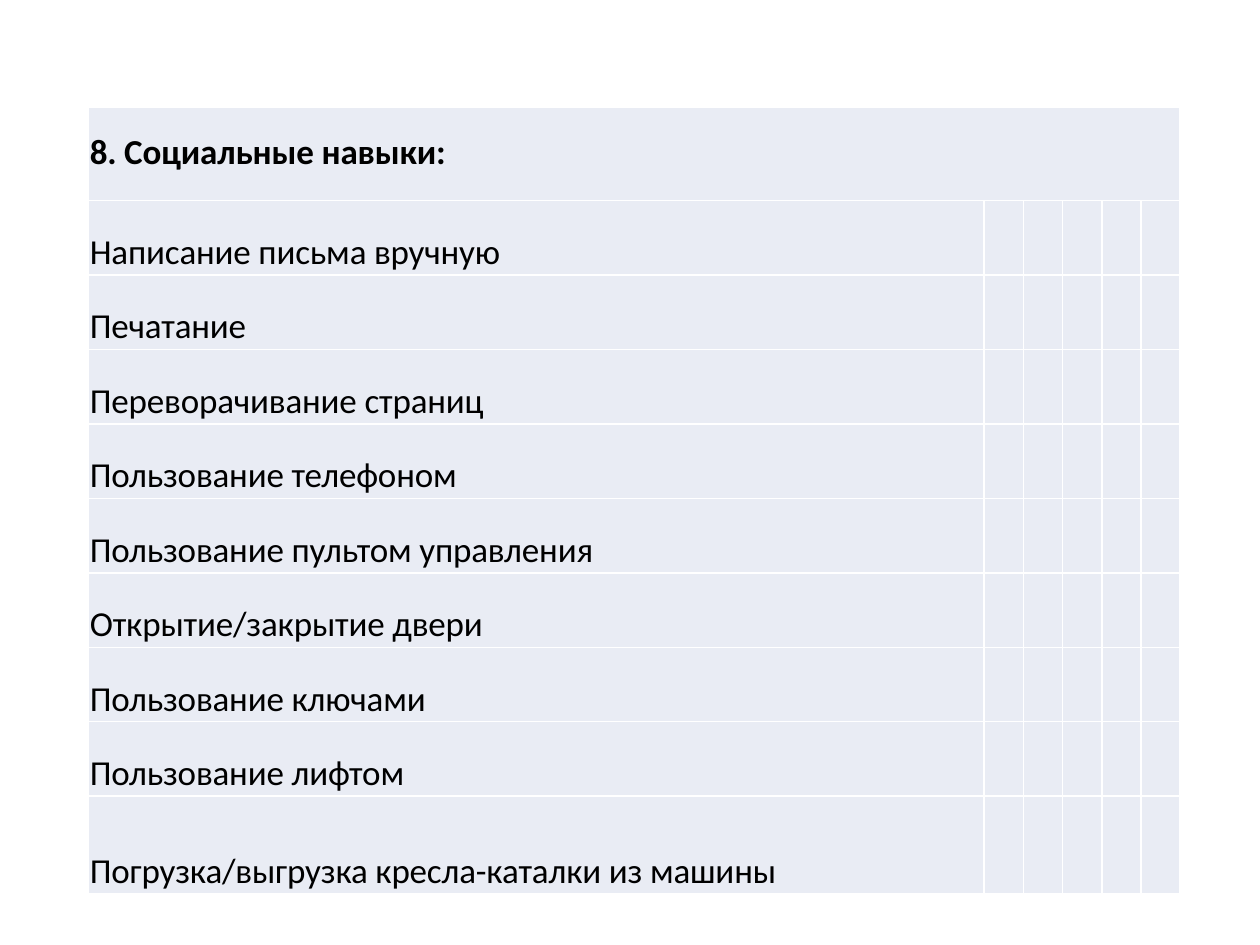
from lxml import etree
from pptx import Presentation
from pptx.dml.color import RGBColor
from pptx.enum import text as text_enum
from pptx.oxml import ns
from pptx.util import Pt

HEADING = "8. Социальные навыки:"
SKILLS = [
    "Написание письма вручную",
    "Печатание",
    "Переворачивание страниц",
    "Пользование телефоном",
    "Пользование пультом управления",
    "Открытие/закрытие двери",
    "Пользование ключами",
    "Пользование лифтом",
    "Погрузка/выгрузка кресла-каталки из машины",
]
SCORE_COLUMNS = 5
SCORE_WIDTH = 22.4
HEADING_HEIGHT = 53.2
LAST_HEIGHT = 55.6


def color(value):
    return RGBColor.from_string(value)


def write_text(cell, content, top, bold=False, size=20, font="Calibri", fill="000000"):
    cell.margin_top = Pt(top)
    paragraph = cell.text_frame.paragraphs[0]
    paragraph._p.get_or_add_pPr().set("marL", str(Pt(0.9)))
    run = paragraph.add_run()
    run.text = content
    run.font.name = font
    run.font.size = Pt(size)
    run.font.bold = bold
    run.font.color.rgb = color(fill)
    run._r.get_or_add_rPr().set("spc", "-10")


def format_cell(cell, fill, border):
    cell.margin_left = cell.margin_top = cell.margin_right = cell.margin_bottom = 0
    cell.vertical_anchor = text_enum.MSO_ANCHOR.TOP
    properties = cell._tc.get_or_add_tcPr()
    for side in ("lnL", "lnR", "lnT", "lnB"):
        line = etree.SubElement(properties, ns.qn(f"a:{side}"), w=str(Pt(1)))
        solid = etree.SubElement(line, ns.qn("a:solidFill"))
        etree.SubElement(solid, ns.qn("a:srgbClr"), val=border)
    cell.fill.solid()
    cell.fill.fore_color.rgb = color(fill)


def add_skills_table(slide, left, top, width, height):
    frame = slide.shapes.add_table(
        len(SKILLS) + 1, SCORE_COLUMNS + 1, Pt(left), Pt(top), Pt(width), Pt(height)
    )
    table = frame.table
    skill_width = width - SCORE_COLUMNS * SCORE_WIDTH
    for column, column_width in zip(table.columns, [skill_width] + [SCORE_WIDTH] * SCORE_COLUMNS):
        column.width = Pt(column_width)
    skill_height = (height - HEADING_HEIGHT - LAST_HEIGHT) / (len(SKILLS) - 1)
    heights = [HEADING_HEIGHT] + [skill_height] * (len(SKILLS) - 1) + [LAST_HEIGHT]
    for row, row_height in zip(table.rows, heights):
        row.height = Pt(row_height)
    for cell in table.iter_cells():
        format_cell(cell, "E9ECF4", "FFFFFF")
    table.cell(0, 0).merge(table.cell(0, SCORE_COLUMNS))
    write_text(table.cell(0, 0), HEADING, 13.8, bold=True)
    for index, skill in enumerate(SKILLS, start=1):
        write_text(table.cell(index, 0), skill, 31 if index == len(SKILLS) else 17.4)


def main():
    presentation = Presentation()
    presentation.slide_width = Pt(720)
    presentation.slide_height = Pt(540)
    slide = presentation.slides.add_slide(presentation.slide_layouts[6])
    add_skills_table(slide, 50.4, 61.4, 624, 449.2)
    presentation.save("out.pptx")


if __name__ == "__main__":
    main()
